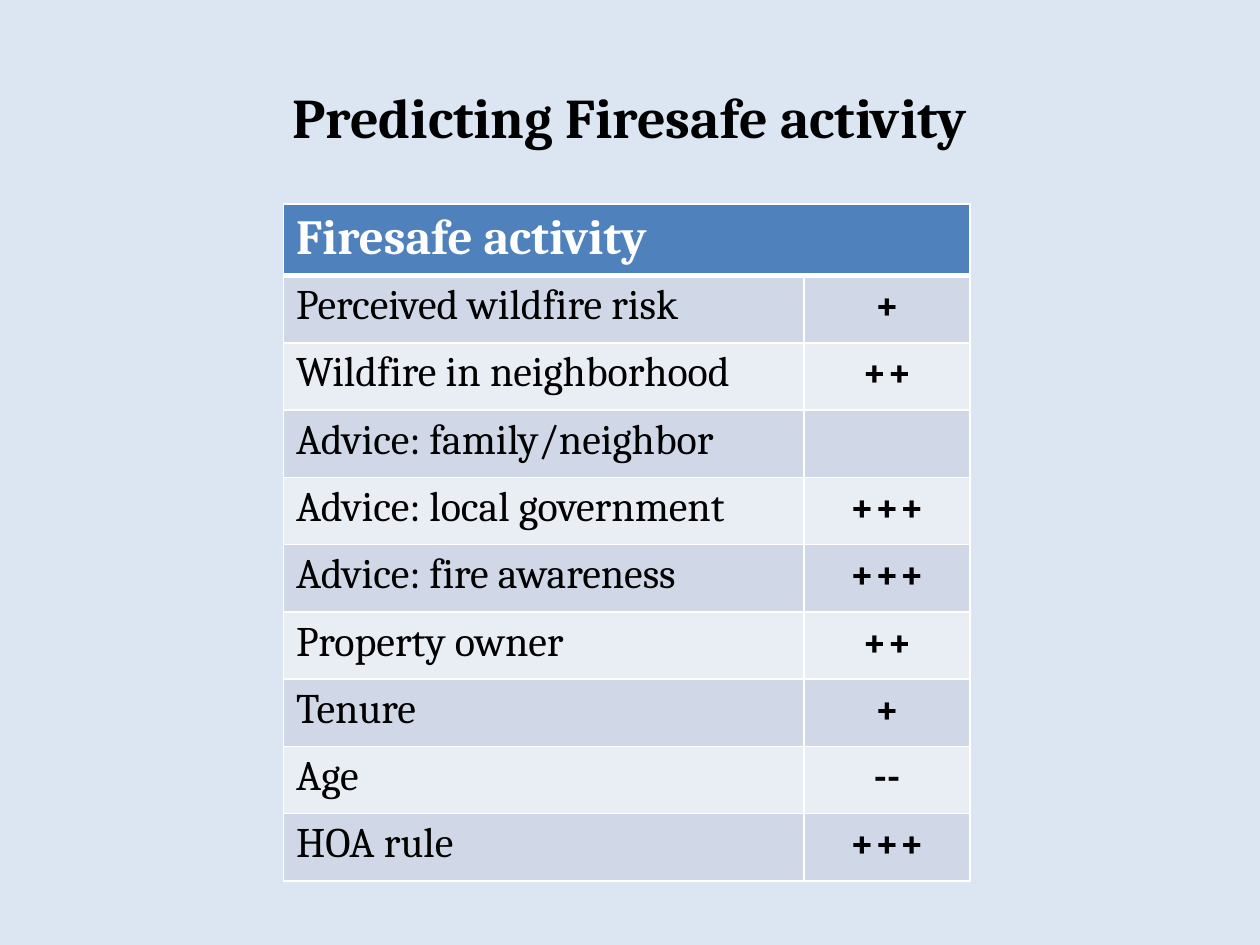
import pptx
import pptx.util
import pptx.oxml
import pptx.oxml.ns
from dataclasses import dataclass
from pptx.dml.color import RGBColor
from pptx.enum.text import MSO_ANCHOR, PP_ALIGN
from pptx.util import Inches


@dataclass(frozen=True)
class Theme:
    font: str = "Cambria"
    background: str = "DCE6F2"
    black: str = "000000"
    white: str = "FFFFFF"
    header: str = "4F81BD"
    bands: tuple = ("D0D8E8", "E9EDF4")
    title_size: int = 32
    header_size: int = 28
    body_size: int = 24


theme = Theme()


def write(frame, text, size, color, bold, align):
    paragraph = frame.paragraphs[0]
    paragraph.text = text
    paragraph.alignment = align
    paragraph.font.name = theme.font
    paragraph.font.size = pptx.util.Pt(size)
    paragraph.font.bold = bold
    paragraph.font.color.rgb = RGBColor.from_string(color)


def paint_cell(cell, fill, top=1, bottom=1):
    """Fill a cell and draw its white borders, with widths in points."""
    properties = cell._tc.get_or_add_tcPr()
    for side, width in (("L", 1), ("R", 1), ("T", top), ("B", bottom)):
        properties.append(pptx.oxml.parse_xml(
            f'<a:ln{side} {pptx.oxml.ns.nsdecls("a")} w="{pptx.util.Pt(width)}">'
            f'<a:solidFill><a:srgbClr val="{theme.white}"/></a:solidFill></a:ln{side}>'))
    cell.fill.solid()
    cell.fill.fore_color.rgb = RGBColor.from_string(fill)


deck = pptx.Presentation()
deck.slide_width, deck.slide_height = Inches(10), Inches(7.5)
page = deck.slides.add_slide(deck.slide_layouts[6])
page.background.fill.solid()
page.background.fill.fore_color.rgb = RGBColor.from_string(theme.background)

title = page.shapes.add_textbox(Inches(0.5), Inches(0.3), Inches(9), Inches(1.25))
title.text_frame.word_wrap = True
title.text_frame.vertical_anchor = MSO_ANCHOR.MIDDLE
write(title.text_frame, "Predicting Firesafe activity", theme.title_size,
      theme.black, True, PP_ALIGN.CENTER)

predictors = [
    ("Perceived wildfire risk", "+"),
    ("Wildfire in neighborhood", "++"),
    ("Advice: family/neighbor", ""),
    ("Advice: local government", "+++"),
    ("Advice: fire awareness", "+++"),
    ("Property owner", "++"),
    ("Tenure", "+"),
    ("Age", "--"),
    ("HOA rule", "+++"),
]
table = page.shapes.add_table(len(predictors) + 1, 2, Inches(2.25), Inches(1.62),
                              Inches(5.45), Inches(5.34)).table
table.columns[0].width, table.columns[1].width = Inches(4.13), Inches(1.32)

for column in range(2):
    paint_cell(table.cell(0, column), theme.header, bottom=3)
table.cell(0, 0).merge(table.cell(0, 1))
write(table.cell(0, 0).text_frame, "Firesafe activity", theme.header_size,
      theme.white, True, PP_ALIGN.LEFT)

for row, (predictor, effect) in enumerate(predictors, start=1):
    for column, text in enumerate((predictor, effect)):
        cell = table.cell(row, column)
        paint_cell(cell, theme.bands[(row - 1) % 2], top=3 if row == 1 else 1)
        write(cell.text_frame, text, theme.body_size, theme.black, column == 1,
              PP_ALIGN.CENTER if column else PP_ALIGN.LEFT)

deck.save("out.pptx")
